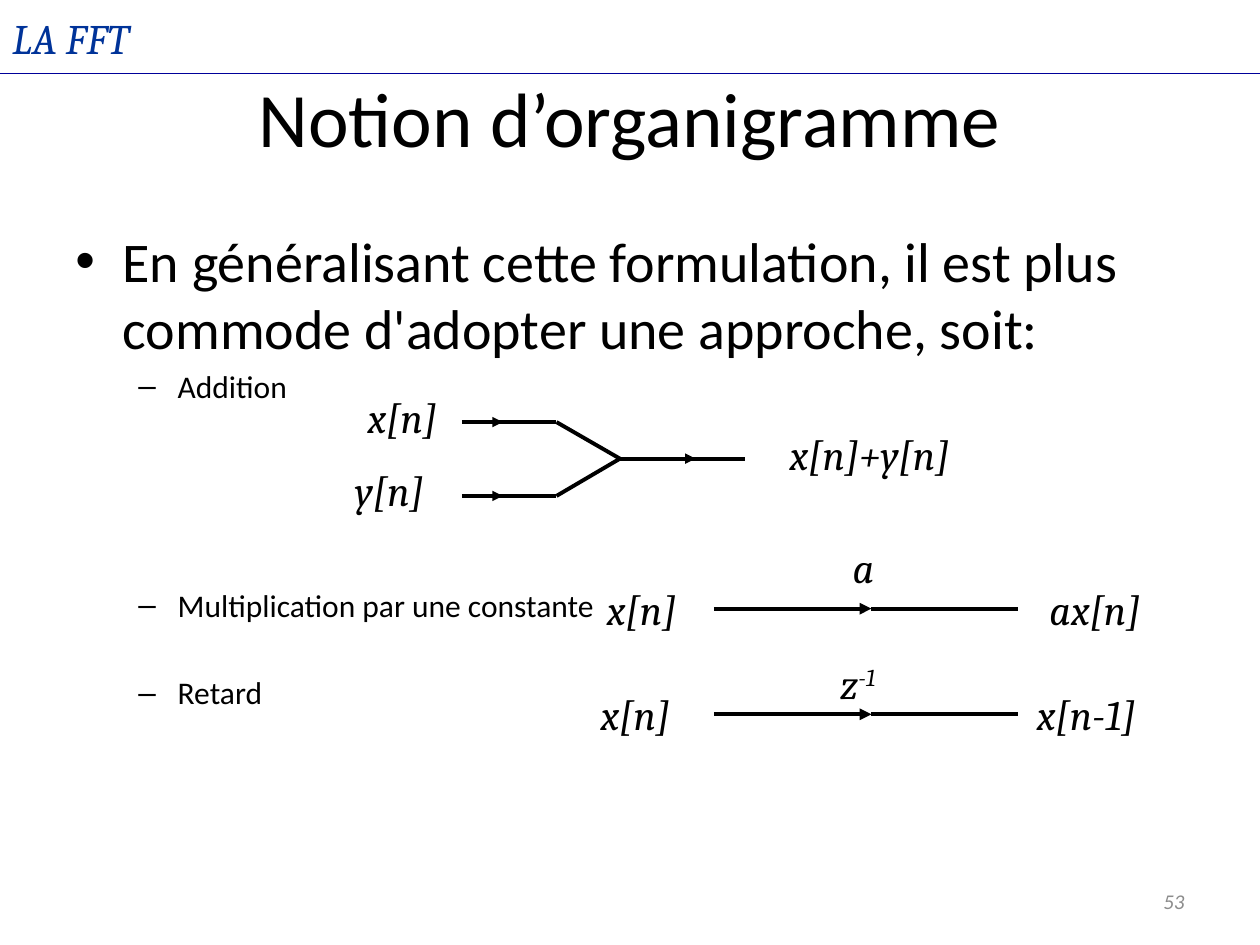
from lxml import etree
from pptx import Presentation
from pptx.dml.color import RGBColor
from pptx.enum.shapes import MSO_CONNECTOR
from pptx.enum.text import MSO_ANCHOR, PP_ALIGN
from pptx.oxml.ns import qn
from pptx.util import Pt

BLACK = RGBColor(0x00, 0x00, 0x00)
GREY = RGBColor(0x8C, 0x8C, 0x8C)
HEADER_BLUE = RGBColor(0x00, 0x33, 0x99)
RULE_BLUE = RGBColor(0x00, 0x00, 0x99)

presentation = Presentation()
presentation.slide_width, presentation.slide_height = Pt(720), Pt(540)
slide = presentation.slides.add_slide(presentation.slide_layouts[6])


def add_text(text, left, top, width, height=36, size=24, font="Cambria", color=BLACK,
             italic=True, wrap=False, anchor=MSO_ANCHOR.TOP, align=PP_ALIGN.LEFT):
    """Add a text box with one paragraph per line of text and return its frame."""
    frame = slide.shapes.add_textbox(Pt(left), Pt(top), Pt(width), Pt(height)).text_frame
    frame.word_wrap = wrap
    frame.vertical_anchor = anchor
    frame.text = text
    for paragraph in frame.paragraphs:
        paragraph.alignment = align
        paragraph.font.name = font
        paragraph.font.size = Pt(size)
        paragraph.font.italic = italic
        paragraph.font.color.rgb = color
    return frame


def add_line(x1, y1, x2, y2, weight=2.25, color=BLACK, arrow=False):
    line = slide.shapes.add_connector(MSO_CONNECTOR.STRAIGHT, Pt(x1), Pt(y1), Pt(x2), Pt(y2))
    line.line.width = Pt(weight)
    line.line.color.rgb = color
    if arrow:
        etree.SubElement(line.line._get_or_add_ln(), qn("a:tailEnd"), type="triangle")
    etree.SubElement(line._element.spPr, qn("a:effectLst"))


# Header, title and page number
add_line(0, 42, 720, 42, weight=0.75, color=RULE_BLUE)
add_text("LA FFT", 0, 3.6, 269, color=HEADER_BLUE, wrap=True)
add_text("Notion d’organigramme", 36, 21.6, 648, 90, size=44, font="Calibri", italic=False,
         wrap=True, anchor=MSO_ANCHOR.MIDDLE, align=PP_ALIGN.CENTER)
add_text("53", 516, 500.5, 168, 28.8, size=12, font="Calibri", color=GREY, wrap=True,
         anchor=MSO_ANCHOR.MIDDLE, align=PP_ALIGN.RIGHT)

# Bulleted text: size, left margin, hanging indent, bullet, space before
body_styles = [
    (32, 27, 27, "•", 0),
    (18, 58.5, 22.5, "–", 3.2),
    (18, 58.5, 22.5, "–", 103.7),
    (18, 58.5, 22.5, "–", 28.3),
]
body = add_text(
    "En généralisant cette formulation, il est plus commode d'adopter une approche, soit:\n"
    "Addition\nMultiplication par une constante\nRetard",
    36, 126, 648, 356, font="Calibri", italic=False, wrap=True)
for level, (paragraph, style) in enumerate(zip(body.paragraphs, body_styles)):
    size, margin, hanging, bullet, space_before = style
    paragraph.level = min(level, 1)
    paragraph.font.size = Pt(size)
    paragraph.space_before = Pt(space_before)
    properties = paragraph._p.get_or_add_pPr()
    properties.set("marL", str(Pt(margin)))
    properties.set("indent", str(-Pt(hanging)))
    bullet_font = etree.Element(qn("a:buFont"), typeface="Arial")
    bullet_char = etree.Element(qn("a:buChar"), char=bullet)
    default_run = properties.find(qn("a:defRPr"))
    default_run.addprevious(bullet_font)
    default_run.addprevious(bullet_char)

# Addition: two inputs meet at a junction and leave as one output
junction_x, junction_y = 354.25, 262.1
for input_y, arrow_x in ((241.2, 278), (283.4, 275)):
    add_line(264, input_y, 318, input_y)
    add_line(318, input_y, junction_x, junction_y)
    add_line(arrow_x, input_y, 287.3, input_y, weight=1, arrow=True)
add_line(junction_x, junction_y, 426, junction_y)
add_line(381, junction_y, 397.5, junction_y, weight=1, arrow=True)
add_text("x[n]", 203, 220.3, 56)
add_text("y[n]", 195.8, 262.1, 56)
add_text("x[n]+y[n]", 444.2, 241.2, 113)

# Multiplication and delay: one branch each, with an arrowhead halfway
for branch_y, source_x, result, result_x, result_width in (
        (347.8, 339.8, "ax[n]", 592.6, 67.7),
        (408.2, 336.2, "x[n-1]", 585.4, 75.6)):
    add_line(408, branch_y, 498, branch_y, arrow=True)
    add_line(498, branch_y, 582, branch_y)
    add_text("x[n]", source_x, branch_y - 18, 56)
    add_text(result, result_x, branch_y - 18, result_width)
add_text("a", 480.2, 306, 26.6)
delay = add_text("z", 473, 372.2, 37.4)
exponent = delay.paragraphs[0].add_run()
exponent.text = "-1"
exponent.font._element.set("baseline", "30000")

presentation.save("out.pptx")
